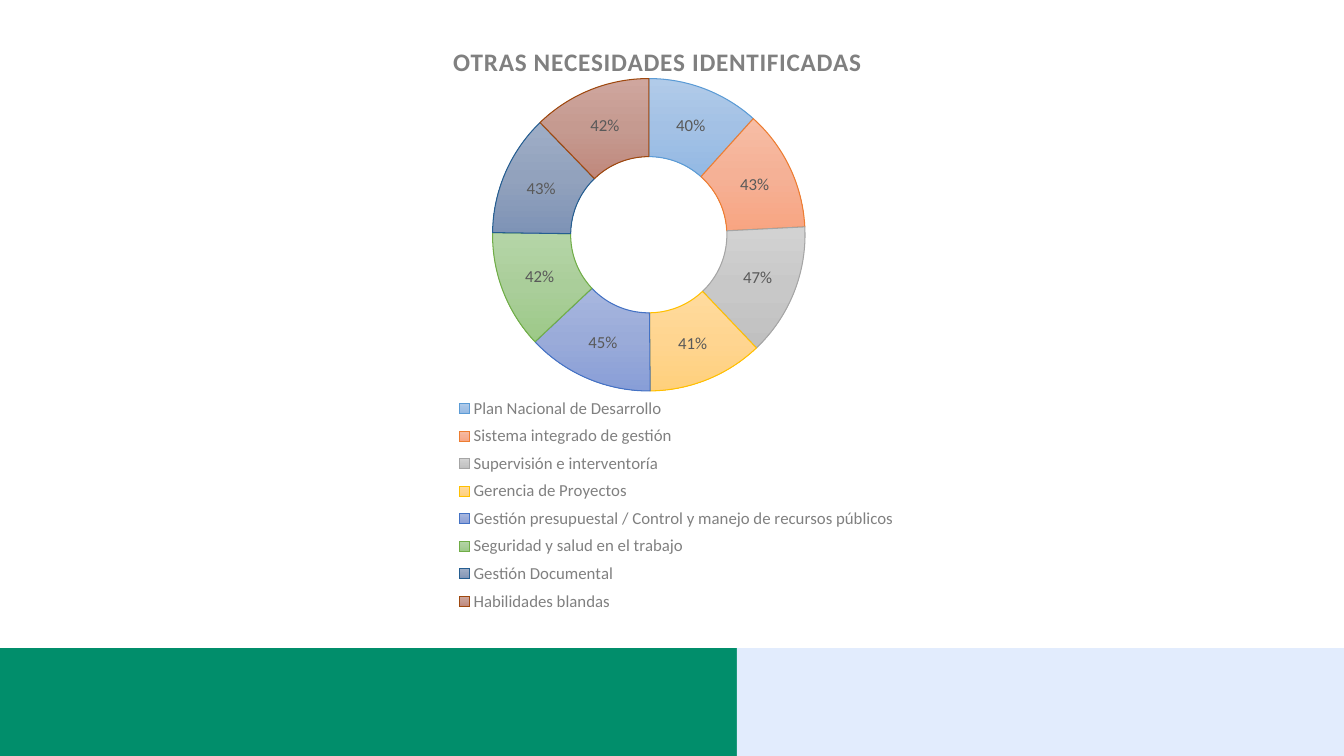
from copy import deepcopy

from lxml.etree import SubElement
from pptx import Presentation
from pptx.chart.data import CategoryChartData
from pptx.dml.color import RGBColor
from pptx.enum.chart import XL_CHART_TYPE as ChartType, XL_LEGEND_POSITION as LegendPosition
from pptx.enum.shapes import MSO_SHAPE as Shape
from pptx.oxml import parse_xml
from pptx.oxml.ns import nsdecls, qn
from pptx.util import Inches, Pt

WIDTH, HEIGHT = 13.33, 7.5
FONT = "Calibri"
GREEN = RGBColor(0x01, 0x8E, 0x6B)
PALE_BLUE = RGBColor(0xE2, 0xEC, 0xFD)
GRAY = RGBColor(0x80, 0x80, 0x80)
DARK_GRAY = RGBColor(0x59, 0x59, 0x59)
TITLE = "OTRAS NECESIDADES IDENTIFICADAS"

NEEDS = [
    ("Plan Nacional de Desarrollo", 0.40, "5B9BD5", "B1CBE9 A3C1E5 93B9E4"),
    ("Sistema integrado de gestión", 0.43, "ED7D31", "F7BDA5 F5B196 F8A582"),
    ("Supervisión e interventoría", 0.47, "A5A5A5", "D2D2D2 C8C8C8 C0C0C0"),
    ("Gerencia de Proyectos", 0.41, "FFC000", "FFDB9E FFD590 FFD07C"),
    ("Gestión presupuestal / Control y manejo de recursos públicos", 0.45,
     "4472C4", "A8B7DF 9AABD9 889ED7"),
    ("Seguridad y salud en el trabajo", 0.42, "70AD47", "B5D5A7 AACE9A 9CC987"),
    ("Gestión Documental", 0.43, "255E91", "9FAEC7 92A2BD 7E93B6"),
    ("Habilidades blandas", 0.42, "9E480E", "CFA69E C59A90 C0887C"),
]


def add_footer(page, left, top, width, height):
    """Fill the footer box with a green band and a pale blue band."""
    split = 0.549 * width
    bands = [(left, split, GREEN), (left + split, width - split, PALE_BLUE)]
    for start, length, color in bands:
        band = page.shapes.add_shape(
            Shape.RECTANGLE, Inches(start), Inches(top), Inches(length), Inches(height))
        band.shadow.inherit = False
        band.fill.solid()
        band.fill.fore_color.rgb = color
        band.line.fill.background()


def style_font(font, size, color, bold=False):
    """Give a font its face, size, colour and weight."""
    font.name, font.size, font.bold = FONT, Pt(size), bold
    font.color.rgb = color


def place_part(part, index, **shares):
    """Lay out a chart part by shares of the chart's size."""
    for layout in part.findall(qn("c:layout")):
        part.remove(layout)
    layout = parse_xml(f"<c:layout {nsdecls('c')}><c:manualLayout/></c:layout>")
    manual = layout[0]
    if part.tag == qn("c:plotArea"):
        SubElement(manual, qn("c:layoutTarget")).set("val", "inner")
    for side in ("x", "y"):
        SubElement(manual, qn(f"c:{side}Mode")).set("val", "edge")
    for name, share in shares.items():
        SubElement(manual, qn(f"c:{name}")).set("val", str(share))
    part.insert(index, layout)


def paint_slices(series):
    """Give each slice its outline and three-stop vertical gradient."""
    for index, (_, _, outline, shades) in enumerate(NEEDS):
        look = series.points[index].format
        look.line.color.rgb = RGBColor.from_string(outline)
        look.line.width = Pt(0.75)
        look.fill.gradient()
        look.fill.gradient_angle = 270
        stops = series.points[index]._element.findall(".//" + qn("a:gsLst"))[index]
        stops.insert(1, deepcopy(stops[0]))
        for step, (stop, shade) in enumerate(zip(look.fill.gradient_stops, shades.split())):
            stop.position = step / 2
            stop.color.rgb = RGBColor.from_string(shade)


def add_needs_chart(page, left, top, width, height):
    """Draw the doughnut of needs with its title and legend in the given box."""
    data = CategoryChartData(number_format="0%")
    data.categories = [need[0] for need in NEEDS]
    data.add_series("Series 1", [need[1] for need in NEEDS])
    chart = page.shapes.add_chart(
        ChartType.DOUGHNUT, Inches(left), Inches(top), Inches(width), Inches(height), data).chart
    chart.font.name, chart.font.size = FONT, Pt(10)

    chart.has_title = True
    title = chart.chart_title
    title.text_frame.text = TITLE
    span = title.text_frame.paragraphs[0].runs[0]
    style_font(span.font, 18, GRAY, bold=True)
    span._r.get_or_add_rPr().set("spc", "50")
    place_part(title._element, 1, x=0.25, y=0.025)

    chart.has_legend = True
    legend = chart.legend
    legend.position = LegendPosition.BOTTOM
    legend.include_in_layout = False
    style_font(legend.font, 12, GRAY)
    place_part(legend._element, 1, x=0.26, y=0.61, w=0.53, h=0.38)

    plot = chart.plots[0]
    plot.vary_by_categories = True
    plot._element.find(qn("c:holeSize")).set("val", "75")
    place_part(plot._element.getparent(), 0, x=0.303, y=0.089, w=0.377, h=0.521)
    series = plot.series[0]
    paint_slices(series)
    labels = series.data_labels
    labels.show_value, labels.show_percentage = True, False
    labels.number_format, labels.number_format_is_linked = "0%", False
    style_font(labels.font, 12, DARK_GRAY)


def main():
    """Build the slide and save the deck."""
    deck = Presentation()
    deck.slide_width, deck.slide_height = Inches(WIDTH), Inches(HEIGHT)
    page = deck.slides.add_slide(deck.slide_layouts[6])
    add_footer(page, -0.02, 6.43, WIDTH + 0.02, HEIGHT - 6.43)
    add_needs_chart(page, 2.39, 0.25, 8.23, 5.95)
    deck.save("out.pptx")


if __name__ == "__main__":
    main()
